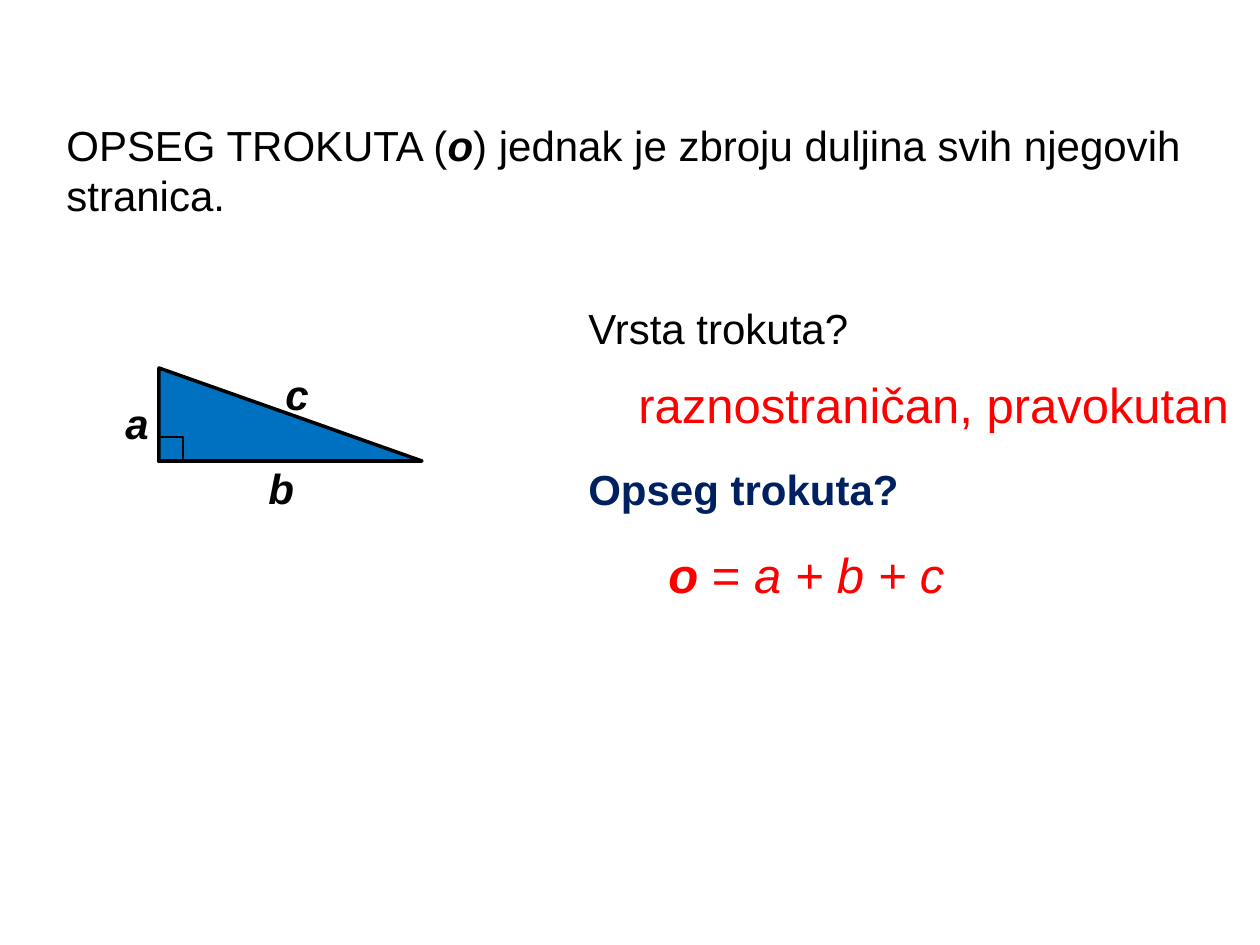
from pptx import Presentation
from pptx.dml.color import RGBColor
from pptx.enum.shapes import MSO_SHAPE
from pptx.enum.text import MSO_AUTO_SIZE
from pptx.util import Pt

EMU_PER_PX = 914400 / 126
RIGHT_TRIANGLE = MSO_SHAPE.RIGHT_TRIANGLE
RECTANGLE = MSO_SHAPE.RECTANGLE
FIT_SHAPE = MSO_AUTO_SIZE.SHAPE_TO_FIT_TEXT

BLACK = RGBColor(0x00, 0x00, 0x00)
NAVY = RGBColor(0x00, 0x20, 0x60)
RED = RGBColor(0xFF, 0x00, 0x00)
BLUE = RGBColor(0x00, 0x70, 0xC0)

FONT = "Arial"
BODY_SIZE = 24
ANSWER_SIZE = 28
BODY_HEIGHT = 63
ANSWER_HEIGHT = 72


def px(*lengths):
    return [round(length * EMU_PER_PX) for length in lengths]


def add_text(slide, box, runs, size=BODY_SIZE, color=BLACK):
    shape = slide.shapes.add_textbox(*px(*box))
    frame = shape.text_frame
    frame.word_wrap = True
    frame.auto_size = FIT_SHAPE
    paragraph = frame.paragraphs[0]
    for text, bold, italic in runs:
        run = paragraph.add_run()
        run.text = text
        run.font.name = FONT
        run.font.size = Pt(size)
        run.font.bold = bold
        run.font.italic = italic
        run.font.color.rgb = color


def add_outlined(shapes, kind, box, line_width, fill=None):
    shape = shapes.add_shape(kind, *px(*box))
    shape.shadow.inherit = False
    if fill is None:
        shape.fill.background()
    else:
        shape.fill.solid()
        shape.fill.fore_color.rgb = fill
    shape.line.color.rgb = BLACK
    shape.line.width = Pt(line_width)


def add_definition(slide, box):
    add_text(slide, box, [
        ("OPSEG TROKUTA (", False, False),
        ("o", True, True),
        (") jednak je zbroju duljina svih njegovih stranica.", False, False),
    ])


def add_questions(slide, left, top):
    add_text(slide, (left, top, 777, BODY_HEIGHT),
             [("Vrsta trokuta?", False, False)])
    add_text(slide, (left, top + 161, 605, BODY_HEIGHT),
             [("Opseg trokuta?", True, False)], color=NAVY)
    add_text(slide, (left + 50, top + 72, 697, ANSWER_HEIGHT),
             [("raznostraničan, pravokutan", False, False)], ANSWER_SIZE, RED)
    add_text(slide, (left + 80, top + 242, 665, ANSWER_HEIGHT),
             [("o ", True, True), ("= ", False, False), ("a + b + c", False, True)],
             ANSWER_SIZE, RED)


def add_triangle(slide, left, top, width, height):
    corner = 25
    group = slide.shapes.add_group_shape()
    add_outlined(group.shapes, RIGHT_TRIANGLE, (left, top, width, height), 2, BLUE)
    add_outlined(group.shapes, RECTANGLE,
                 (left - 1, top + height - corner + 1, corner, corner), 1.5)
    for side, x, y in (("c", 114, -6), ("b", 97, 88), ("a", -46, 23)):
        add_text(slide, (left + x, top + y, 45, BODY_HEIGHT), [(side, True, True)])


def main():
    presentation = Presentation()
    presentation.slide_width, presentation.slide_height = px(1260, 945)
    slide = presentation.slides.add_slide(presentation.slide_layouts[6])
    add_definition(slide, (54, 113, 1162, 115))
    add_questions(slide, 576, 296)
    add_triangle(slide, 159, 368, 263, 93)
    presentation.save("out.pptx")


if __name__ == "__main__":
    main()
